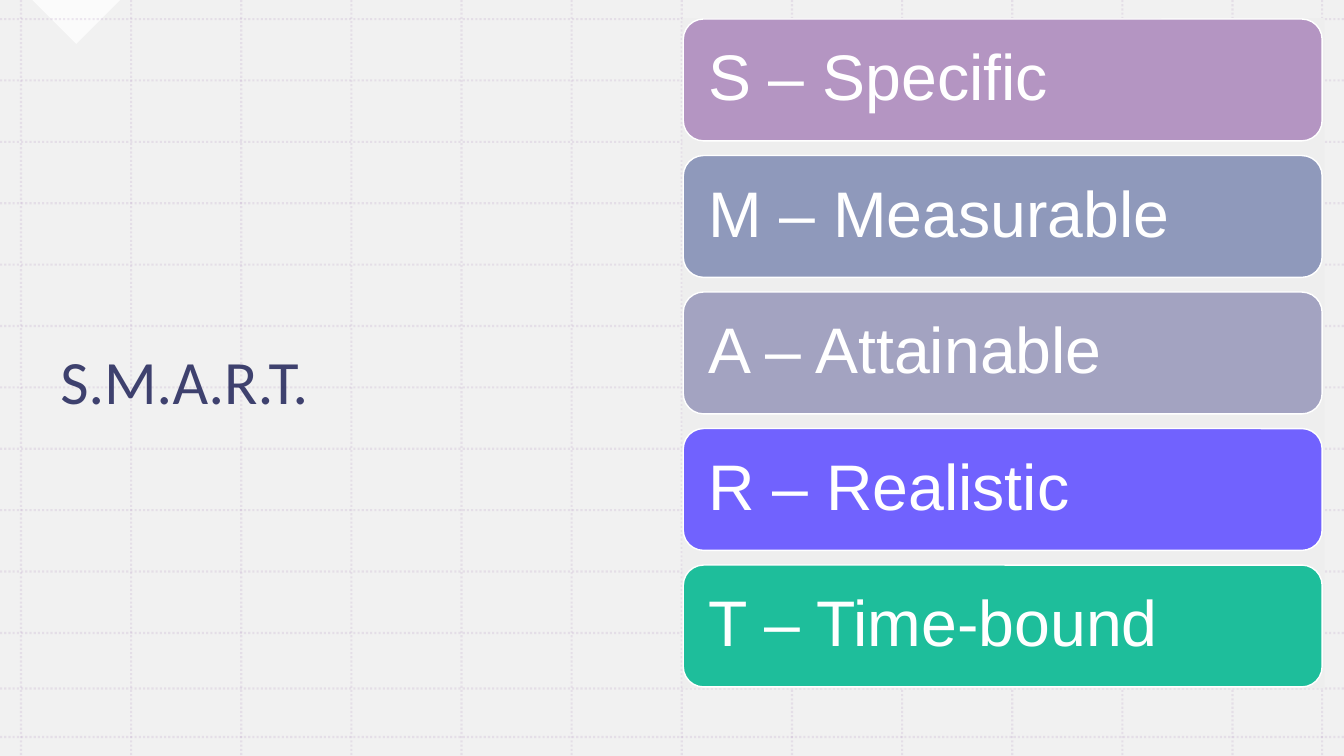
from pptx import Presentation
from pptx.dml.color import RGBColor
from pptx.enum.dml import MSO_LINE_DASH_STYLE as DASH
from pptx.enum.shapes import MSO_CONNECTOR as CONNECTOR, MSO_SHAPE as SHAPE
from pptx.enum.text import MSO_ANCHOR as ANCHOR, PP_ALIGN as ALIGN
from pptx.oxml.ns import qn
from pptx.util import Cm, Pt
from lxml.etree import SubElement

WIDTH, HEIGHT = 33.87, 19.05
GOALS = [
    ("S – Specific", "B495C2"),
    ("M – Measurable", "8F99BB"),
    ("A – Attainable", "A3A3C1"),
    ("R – Realistic", "7162FE"),
    ("T – Time-bound", "1EBE9B"),
]


def set_colour(fill, colour, opacity=100):
    fill.solid()
    fill.fore_color.rgb = RGBColor.from_string(colour)
    if opacity < 100:
        tint = fill._xPr.find(".//" + qn("a:srgbClr"))
        SubElement(tint, qn("a:alpha"), val=str(opacity * 1000))


def set_format(target, values):
    for name, value in values.items():
        setattr(target, name, value)


def add_block(slide, kind, left, top, width, height, colour, opacity=100):
    block = slide.shapes.add_shape(kind, Cm(left), Cm(top), Cm(width), Cm(height))
    block.shadow.inherit = False
    set_colour(block.fill, colour, opacity)
    block.line.fill.background()
    return block


def add_grid_line(slide, x1, y1, x2, y2):
    rule = slide.shapes.add_connector(CONNECTOR.STRAIGHT, Cm(x1), Cm(y1), Cm(x2), Cm(y2))
    set_colour(rule.line.fill, "B495C2", 20)
    set_format(rule.line, {"width": Pt(1.5), "dash_style": DASH.ROUND_DOT})
    SubElement(rule._element.spPr, qn("a:effectLst"))


def add_grid(slide):
    columns = [0.53 + i * (31.06 - 0.53) / 11 for i in range(12)] + [33.32]
    rows = [0.48 + i * (15.95 - 0.48) / 10 for i in range(11)] + [17.35, 18.57]
    for x in columns:
        add_grid_line(slide, x, 0, x, HEIGHT)
    for y in rows:
        add_grid_line(slide, 0, y, WIDTH, y)


def write(shape, words, font, size, colour, opacity=100, margin=0.25):
    frame = shape.text_frame
    set_format(frame, {
        "word_wrap": True,
        "vertical_anchor": ANCHOR.MIDDLE,
        "margin_left": Cm(margin),
        "margin_right": Cm(margin),
    })
    paragraph = frame.paragraphs[0]
    set_format(paragraph, {"alignment": ALIGN.LEFT, "line_spacing": 0.9})
    run = paragraph.add_run()
    run.text = words
    set_format(run.font, {"name": font, "size": Pt(size)})
    set_colour(run.font.fill, colour, opacity)


def add_title(slide, words):
    title = slide.shapes.add_textbox(Cm(1.27), Cm(2.01), Cm(15.42), Cm(15.37))
    write(title, words, "Calibri", 44, "12154E", 80)


def add_goal(slide, index, words, colour):
    goal = add_block(slide, SHAPE.ROUNDED_RECTANGLE,
                     17.22, 0.48 + index * 3.44, 16.1, 3.07, colour)
    set_colour(goal.line.fill, "FFFFFF")
    goal.line.width = Pt(1)
    write(goal, words, "Arial", 46, "FFFFFF", margin=0.48)


def main():
    deck = Presentation()
    set_format(deck, {"slide_width": Cm(WIDTH), "slide_height": Cm(HEIGHT)})
    slide = deck.slides.add_slide(deck.slide_layouts[6])
    set_colour(slide.background.fill, "FFFFFF")
    add_block(slide, SHAPE.RECTANGLE, 0, 0, WIDTH, HEIGHT, "EEEEEE", 80)
    corner = add_block(slide, SHAPE.RIGHT_TRIANGLE, 1.14, -0.79, 1.57, 1.57, "FFFFFF", 75)
    corner.rotation = 315
    add_grid(slide)
    add_title(slide, "S.M.A.R.T.")
    add_block(slide, SHAPE.RECTANGLE, 17.2, 0.46, 16.18, 16.89, "EEEEEE")
    for index, (words, colour) in enumerate(GOALS):
        add_goal(slide, index, words, colour)
    deck.save("out.pptx")


if __name__ == "__main__":
    main()
